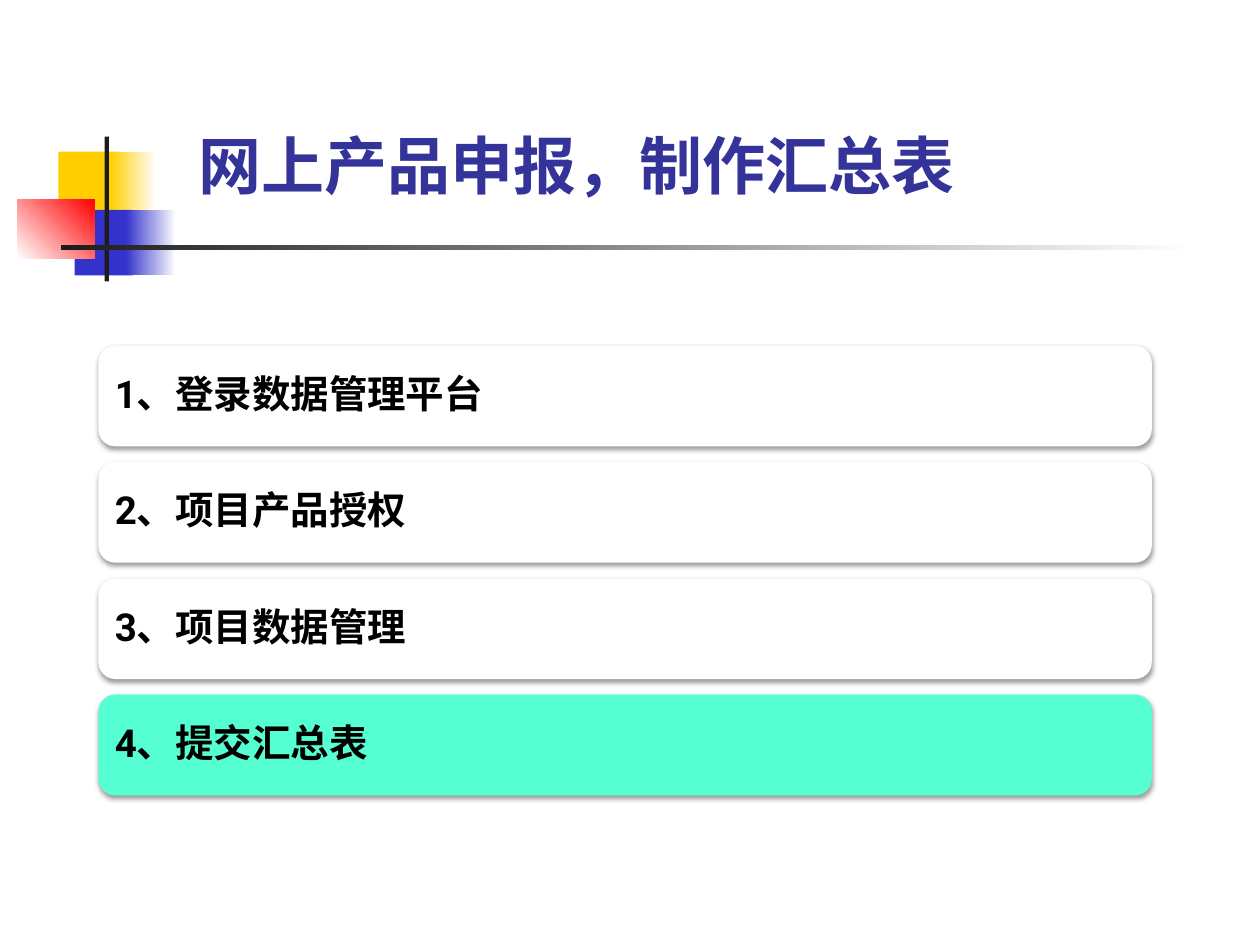
from lxml.etree import SubElement
from pptx import Presentation
from pptx.dml.color import RGBColor
from pptx.enum.shapes import MSO_SHAPE
from pptx.enum.text import MSO_ANCHOR
from pptx.oxml.ns import qn
from pptx.util import Pt

COLORS = {
    "yellow": "FFCF01", "blue": "3333CC", "red": "FF0000", "ink": "1C1C1C",
    "white": "FFFFFF", "title": "333399", "text": "000000",
    "active": "56FFD2", "shadow": "000000",
}
LATIN_FONT = "Roboto"
CHINESE_FONT = "Noto Sans CJK SC"
STEPS = ["1、登录数据管理平台", "2、项目产品授权", "3、项目数据管理", "4、提交汇总表"]
ACTIVE_STEP = 3


def rgb(name):
    return RGBColor.from_string(COLORS[name])


def add_block(page, box, color, end_color=None, angle=0, kind=MSO_SHAPE.RECTANGLE):
    """Add a borderless shape, filled plainly or with a two-colour gradient."""
    block = page.shapes.add_shape(kind, *map(Pt, box))
    block.shadow.inherit = False
    block.line.fill.background()
    if end_color:
        block.fill.gradient()
        block.fill.gradient_angle = angle
        for stop, name, position in zip(block.fill.gradient_stops, (color, end_color), (0, 1)):
            stop.color.rgb = rgb(name)
            stop.position = position
    else:
        block.fill.solid()
        block.fill.fore_color.rgb = rgb(color)
    return block


def add_soft_shadow(block):
    effects = block._element.spPr.find(qn("a:effectLst"))
    shadow = SubElement(effects, qn("a:outerShdw"), blurRad=str(Pt(3.1)), dist=str(Pt(1.6)),
                        dir="5400000", algn="ctr", rotWithShape="0")
    color = SubElement(shadow, qn("a:srgbClr"), val=COLORS["shadow"])
    SubElement(color, qn("a:alpha"), val="38000")


def add_text(page, box, text, size, font, color, inset, spacing=1.0):
    label = page.shapes.add_textbox(*map(Pt, box))
    frame = label.text_frame
    frame.word_wrap = True
    frame.vertical_anchor = MSO_ANCHOR.MIDDLE
    frame.margin_left = frame.margin_right = Pt(inset)
    frame.margin_top = frame.margin_bottom = Pt(inset)
    para = frame.paragraphs[0]
    para.line_spacing = spacing
    span = para.add_run()
    span.text = text
    span.font.size = Pt(size)
    span.font.bold = True
    span.font.name = font
    span.font.color.rgb = rgb(color)
    SubElement(span.font._element, qn("a:ea"), typeface=CHINESE_FONT)


def add_ornament(page, box):
    """Overlapping colour squares with a crossed vertical and horizontal bar."""
    left, top, width, height = box
    parts = [
        ((23.5, 8.6, 34.5, 37.4), "yellow", None, 0),
        ((53.3, 8.6, 26, 37.4), "yellow", "white", 0),
        ((32.8, 42, 33.2, 37.4), "blue", None, 0),
        ((62, 42, 28.8, 37.4), "blue", "white", 0),
        ((0, 36, 44.4, 33.5), "white", "red", 45),
        ((50, 0, 2.5, height), "ink", None, 0),
        ((25, 62.2, width - 25, 2.5), "ink", "white", 0),
    ]
    for (x, y, w, h), color, end_color, angle in parts:
        add_block(page, (left + x, top + y, w, h), color, end_color, angle)


def add_title(page, box):
    add_text(page, box, "网上产品申报，制作汇总表", 36, CHINESE_FONT, "title", inset=7.2)


def add_steps(page, box):
    """Stack equal cards down the box, with the current step highlighted."""
    left, top, width, height = box
    gap, pad = 8.9, 2.8
    card_height = (height - gap * (len(STEPS) - 1)) / len(STEPS)
    for index, step in enumerate(STEPS):
        card_top = top + index * (card_height + gap)
        color = "active" if index == ACTIVE_STEP else "white"
        card = add_block(page, (left, card_top, width, card_height), color,
                         kind=MSO_SHAPE.ROUNDED_RECTANGLE)
        add_soft_shadow(card)
        label_box = (left + pad, card_top + pad, width - 2 * pad, card_height - 2 * pad)
        add_text(page, label_box, step, 22, LATIN_FONT, "text", inset=6.6, spacing=0.9)


def main():
    deck = Presentation()
    deck.slide_width, deck.slide_height = Pt(720), Pt(540)
    page = deck.slides.add_slide(deck.slide_layouts[6])
    add_ornament(page, (9.8, 78, 673, 82.8))
    add_title(page, (106.5, 49, 579.6, 90))
    add_steps(page, (56.3, 197.5, 601.9, 257))
    deck.save("out.pptx")


if __name__ == "__main__":
    main()
